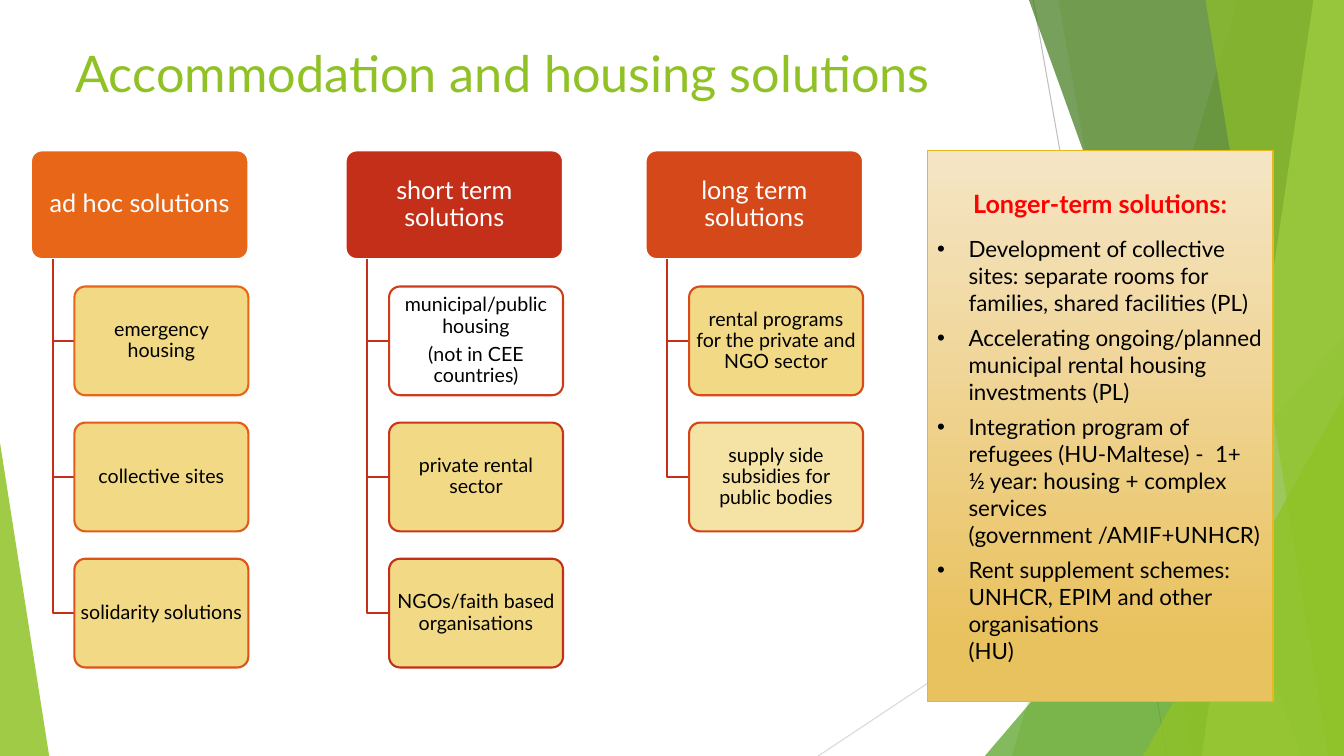
from lxml.etree import SubElement
from pptx import Presentation
from pptx.dml.color import RGBColor
from pptx.enum.shapes import MSO_CONNECTOR, MSO_SHAPE
from pptx.enum.text import MSO_ANCHOR, MSO_AUTO_SIZE, PP_ALIGN
from pptx.oxml.ns import qn
from pptx.util import Cm, Pt

FONT = "Lato"
SLIDE_WIDTH, SLIDE_HEIGHT = 33.87, 19.05
GREEN, SAND, ELBOW = "90C226", "F0D578", "C42F1A"

# Facets: x of the slanted edge at the top and bottom, or a triangle's box and apex
FACETS = [
    ("edge", (31.19, 25.5), GREEN, 30),
    ("edge", (26.67, 30.05), GREEN, 20),
    ("triangle", (24.82, 8.46, 9.05, 10.59, 1), "54A021", 72),
    ("edge", (25.93, 32.79), "3F7819", 70),
    ("edge", (33.1, 30.28), "C0E474", 70),
    ("edge", (30.38, 33.48), GREEN, 65),
    ("triangle", (28.81, 9.98, 5.06, 9.07, 1), GREEN, 80),
    ("triangle", (0, 11.15, 1.24, 7.9, 0), GREEN, 85),
]

# Columns: left, heading, heading fill, items (paragraphs, fill, opacity, outline)
COLUMNS = [
    (0.78, "ad hoc solutions", "E76618", [
        (["emergency housing"], SAND, 90, "E76618"),
        (["collective sites"], SAND, 90, "E25D18"),
        (["solidarity solutions"], SAND, 90, "DD5419")]),
    (8.71, "short term solutions", "C42F1A", [
        (["municipal/public housing", "(not in CEE countries)"], "FFFFFF", 90, "CE3D1A"),
        (["private rental sector"], SAND, 90, "C9361A"),
        (["NGOs/faith based organisations"], SAND, 90, "C42F1A")]),
    (16.27, "long term solutions", "D54819", [
        (["rental programs for the private and NGO sector"], SAND, 90, "D84C19"),
        (["supply side subsidies for public bodies"], "F5E3A5", 100, "D34419")]),
]

LONGER_TERM = [
    "Development of collective sites: separate rooms for families, shared facilities (PL)",
    "Accelerating ongoing/planned municipal rental housing investments (PL)",
    "Integration program of refugees (HU-Maltese) -  1+ ½ year: housing + complex "
    "services \n(government /AMIF+UNHCR)",
    "Rent supplement schemes: UNHCR, EPIM and other organisations\n(HU)",
]


def color(hex_string):
    return RGBColor.from_string(hex_string)


def paint(shape, fill=None, opacity=100, line=None, width=1.5):
    shape.shadow.inherit = False
    if fill:
        shape.fill.solid()
        shape.fill.fore_color.rgb = color(fill)
        if opacity < 100:
            tint = shape.fill._xPr.find(qn("a:solidFill"))[0]
            SubElement(tint, qn("a:alpha"), val=str(opacity * 1000))
    else:
        shape.fill.background()
    if line:
        shape.line.color.rgb = color(line)
        shape.line.width = Pt(width)
    else:
        shape.line.fill.background()


def write(frame, text, first=True, size=14, ink="000000", bold=False,
          align=PP_ALIGN.CENTER, line_spacing=1.0, after=0, bullet=False):
    paragraph = frame.paragraphs[0] if first else frame.add_paragraph()
    paragraph.text = text
    paragraph.alignment = align
    paragraph.line_spacing = line_spacing
    paragraph.space_before = Pt(0)
    paragraph.space_after = Pt(after)
    if bullet:
        properties = paragraph._p.get_or_add_pPr()
        properties.set("marL", str(Cm(0.79)))
        properties.set("indent", str(-Cm(0.79)))
        SubElement(properties, qn("a:buFont"), typeface="Arial")
        SubElement(properties, qn("a:buChar"), char="•")
    for run in paragraph.runs:
        run.font.name = FONT
        run.font.size = Pt(size)
        run.font.bold = bold
        run.font.color.rgb = color(ink)


def draw_polyline(slide, points, close):
    (start_x, start_y), *others = [(Cm(x), Cm(y)) for x, y in points]
    builder = slide.shapes.build_freeform(start_x, start_y)
    builder.add_line_segments(others, close=close)
    return builder.convert_to_shape()


def draw_background(slide):
    # Thin crossing lines
    for ends, gray in [((26.04, 0, 29.41, SLIDE_HEIGHT), "BFBFBF"),
                       ((SLIDE_WIDTH, 10.24, 20.62, SLIDE_HEIGHT), "D9D9D9")]:
        connector = slide.shapes.add_connector(
            MSO_CONNECTOR.STRAIGHT, *[Cm(value) for value in ends])
        connector.line.color.rgb = color(gray)
        connector.line.width = Pt(0.75)
        SubElement(connector._element.spPr, qn("a:effectLst"))
    # Translucent green facets
    for kind, geometry, fill, opacity in FACETS:
        if kind == "edge":
            top_x, bottom_x = geometry
            shape = draw_polyline(slide, [
                (top_x, 0), (SLIDE_WIDTH, 0),
                (SLIDE_WIDTH, SLIDE_HEIGHT), (bottom_x, SLIDE_HEIGHT)], True)
        else:
            *box, apex = geometry
            shape = slide.shapes.add_shape(
                MSO_SHAPE.ISOSCELES_TRIANGLE, *[Cm(value) for value in box])
            shape.adjustments[0] = apex
        paint(shape, fill, opacity)


def draw_title(slide, left, top, width, height):
    title = slide.shapes.title
    title.left, title.top, title.width, title.height = map(Cm, (left, top, width, height))
    frame = title.text_frame
    frame.auto_size = MSO_AUTO_SIZE.NONE
    frame.vertical_anchor = MSO_ANCHOR.MIDDLE
    write(frame, "Accommodation and housing solutions", size=36, ink=GREEN,
          align=PP_ALIGN.LEFT)


def draw_card(slide, left, top, width, height, paragraphs, fill, opacity, line,
              size=14, ink="000000"):
    card = slide.shapes.add_shape(
        MSO_SHAPE.ROUNDED_RECTANGLE, Cm(left), Cm(top), Cm(width), Cm(height))
    card.adjustments[0] = 0.1
    paint(card, fill, opacity, line)
    frame = card.text_frame
    frame.word_wrap = True
    frame.vertical_anchor = MSO_ANCHOR.MIDDLE
    frame.margin_left = frame.margin_right = Cm(0.06)
    frame.margin_top = frame.margin_bottom = Cm(0.05)
    for index, text in enumerate(paragraphs):
        write(frame, text, first=index == 0, size=size, ink=ink,
              line_spacing=0.9, after=size * 0.35)


def draw_column(slide, left, top, width, heading, fill, items):
    height, pitch = 2.74, 3.43
    trunk, item_left = left + width * 0.1, left + width * 0.2
    draw_card(slide, left, top, width, height, [heading], fill, 100, "FFFFFF",
              size=18, ink="FFFFFF")
    for row, (paragraphs, item_fill, opacity, outline) in enumerate(items, start=1):
        item_top = top + row * pitch
        middle = item_top + height / 2
        elbow = draw_polyline(slide, [
            (trunk, top + height), (trunk, middle), (item_left, middle)], False)
        paint(elbow, line=ELBOW)
        draw_card(slide, item_left, item_top, width * 0.8, height,
                  paragraphs, item_fill, opacity, outline)


def draw_panel(slide, left, top, width, height):
    panel = slide.shapes.add_shape(
        MSO_SHAPE.RECTANGLE, Cm(left), Cm(top), Cm(width), Cm(height))
    paint(panel, line="E6B91E", width=1)
    panel.fill.gradient()
    panel.fill.gradient_angle = 270
    for stop, position, tint in zip(panel.fill.gradient_stops, (0, 0.88),
                                    ("F5E5C5", "E9C260")):
        stop.position = position
        stop.color.rgb = color(tint)
    frame = panel.text_frame
    frame.word_wrap = True
    frame.vertical_anchor = MSO_ANCHOR.MIDDLE
    write(frame, "Longer-term solutions:", size=18, ink="FF0000", bold=True, after=12)
    for text in LONGER_TERM:
        write(frame, text, first=False, size=16, align=PP_ALIGN.LEFT, after=6, bullet=True)


def main():
    presentation = Presentation()
    presentation.slide_width = Cm(SLIDE_WIDTH)
    presentation.slide_height = Cm(SLIDE_HEIGHT)
    slide = presentation.slides.add_slide(presentation.slide_layouts[5])
    draw_background(slide)
    draw_title(slide, 1.65, 0.84, 23.88, 1.96)
    for left, heading, fill, items in COLUMNS:
        draw_column(slide, left, 3.79, 5.48, heading, fill, items)
    draw_panel(slide, 23.37, 3.79, 8.71, 13.89)
    presentation.save("out.pptx")


if __name__ == "__main__":
    main()
